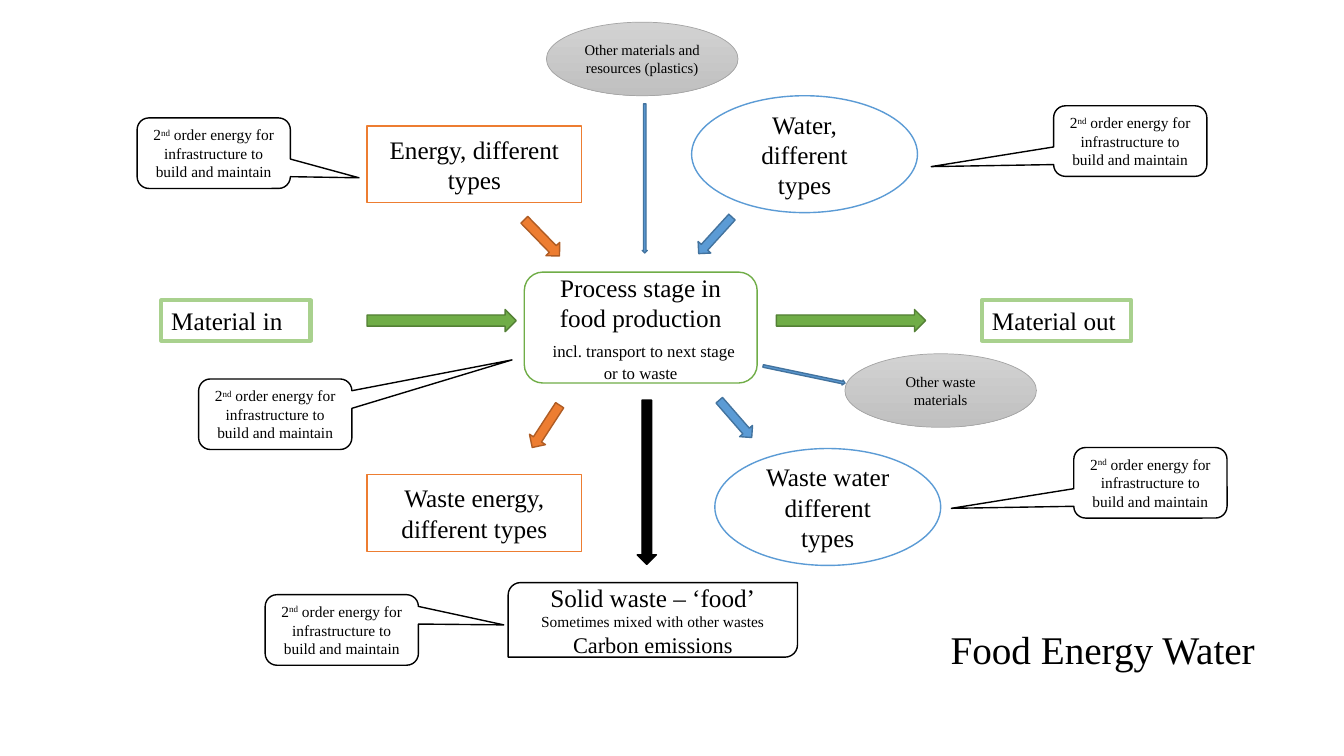
from pptx import Presentation
from pptx.dml.color import RGBColor
from pptx.enum.shapes import MSO_SHAPE as SHAPE
from pptx.enum.text import MSO_ANCHOR as ANCHOR, MSO_AUTO_SIZE as AUTO, PP_ALIGN as ALIGN
from pptx.util import Pt

PX = 9144  # EMU in one px, 100 px to the inch
FONT = "Times New Roman"
BLACK, WHITE = "000000", "FFFFFF"
ORANGE, BLUE, GREEN = "ED7D31", "5B9BD5", "70AD47"
DARK = {ORANGE: "AF5C24", BLUE: "43739E", GREEN: "538035", BLACK: BLACK}


def px(*lengths):
    return [n * PX for n in lengths]


def color(value):
    return RGBColor.from_string(value)


def add_run(p, text, size, superscript=False):
    r = p.add_run()
    r.text = text
    r.font.name, r.font.size = FONT, Pt(size)
    r.font.color.rgb = color(BLACK)
    if superscript:
        r._r.get_or_add_rPr().set("baseline", "30000")


def write(sp, paragraphs, align=ALIGN.CENTER, anchor=ANCHOR.MIDDLE):
    """Each paragraph is a list of (text, size[, superscript]) runs."""
    tf = sp.text_frame
    tf.word_wrap = True
    tf.vertical_anchor = anchor
    for i, runs in enumerate(paragraphs):
        p = tf.paragraphs[0] if i == 0 else tf.add_paragraph()
        p.alignment = align
        for run in runs:
            add_run(p, *run)


def add_box(s, kind, box, line, paragraphs=(), fill=WHITE, width=1):
    sp = s.shapes.add_shape(kind, *px(*box))
    sp.shadow.inherit = False
    sp.fill.solid()
    sp.fill.fore_color.rgb = color(fill)
    sp.line.color.rgb = color(line)
    sp.line.width = Pt(width)
    write(sp, paragraphs)
    return sp


def add_arrow(s, kind, box, fill, rotation=0):
    sp = add_box(s, kind, box, DARK[fill], fill=fill)
    sp.rotation = rotation


def add_callout(s, left, top, tip_x, tip_y):
    note = [("2", 11), ("nd", 11, True),
            (" order energy for infrastructure to build and maintain", 11)]
    sp = add_box(s, SHAPE.ROUNDED_RECTANGULAR_CALLOUT, (left, top, 152, 70), BLACK, [note])
    sp.adjustments[0], sp.adjustments[1] = tip_x, tip_y


def add_other(s, left, top, text):
    sp = add_box(s, SHAPE.OVAL, (left, top, 190, 73), "A5A5A5", [[(text, 10.5)]], width=0.5)
    sp.fill.gradient()
    sp.fill.gradient_angle = 270
    for stop, shade in zip(sp.fill.gradient_stops, ("D2D2D2", "C0C0C0")):
        stop.color.rgb = color(shade)


def add_material(s, left, text):
    sp = s.shapes.add_textbox(*px(left, 298, 148, 40))
    sp.line.color.rgb = color("A9D18E")
    sp.line.width = Pt(3)
    write(sp, [[(text, 18)]], ALIGN.LEFT, ANCHOR.TOP)
    sp.text_frame.auto_size = AUTO.SHAPE_TO_FIT_TEXT


def add_title(s, box, text):
    sp = s.shapes.add_textbox(*px(*box))
    write(sp, [[(text, 28)]], ALIGN.LEFT)
    sp.text_frame.paragraphs[0].line_spacing = 0.9


def main():
    prs = Presentation()
    prs.slide_width, prs.slide_height = px(1333, 750)
    s = prs.slides.add_slide(prs.slide_layouts[6])

    # Process stage in the centre
    add_box(s, SHAPE.ROUNDED_RECTANGLE, (520, 270, 231, 110), GREEN, [
        [("Process stage in food production", 18)],
        [(" ", 18), ("incl. transport to next stage or to waste", 12)]])

    # Energy and water, in and out
    for top, text in ((125, "Energy, different types"), (471, "Waste energy, different types")):
        add_box(s, SHAPE.RECTANGLE, (364, top, 213, 76), ORANGE, [[(text, 18)]])
    for left, top, text in ((686, 95, "Water, different types"),
                            (709, 445, "Waste water different types")):
        add_box(s, SHAPE.OVAL, (left, top, 224, 116), BLUE, [[(text, 18)]])

    # Solid waste
    add_box(s, SHAPE.ROUND_2_DIAG_RECTANGLE, (504, 578, 287, 74), BLACK, [
        [("Solid waste – ‘food’", 18)],
        [("Sometimes mixed with other wastes", 11)],
        [("Carbon emissions", 16)]])

    # Second order energy notes
    for callout in ((136, 117, 0.948, 0.349), (263, 590, 1.057, -0.072),
                    (1045, 105, -1.299, 0.362), (1065, 444, -1.299, 0.362),
                    (197, 376, 1.545, -0.77)):
        add_callout(s, *callout)

    # Other materials
    add_other(s, 542, 22, "Other materials and resources (plastics)")
    add_other(s, 838, 351, "Other waste materials")

    # Flows
    for left in (364, 770):
        add_arrow(s, SHAPE.RIGHT_ARROW, (left, 307, 148, 22), GREEN)
    for box, fill, rotation in (((528, 211, 19, 50), ORANGE, 315.8),
                                ((532, 398, 19, 50), ORANGE, 33),
                                ((701, 209, 17, 49), BLUE, 42.3),
                                ((721, 391, 17, 49), BLUE, 319),
                                ((632, 397, 19, 163), BLACK, 0),
                                ((637, 103, 5, 148), BLUE, 0),
                                ((795, 330, 5, 83), BLUE, 281.8)):
        add_arrow(s, SHAPE.DOWN_ARROW, box, fill, rotation)

    # Material labels and title
    add_material(s, 160, "Material in")
    add_material(s, 974, "Material out")
    add_title(s, (933, 574, 347, 145), "Food Energy Water")

    prs.save("out.pptx")


if __name__ == "__main__":
    main()
